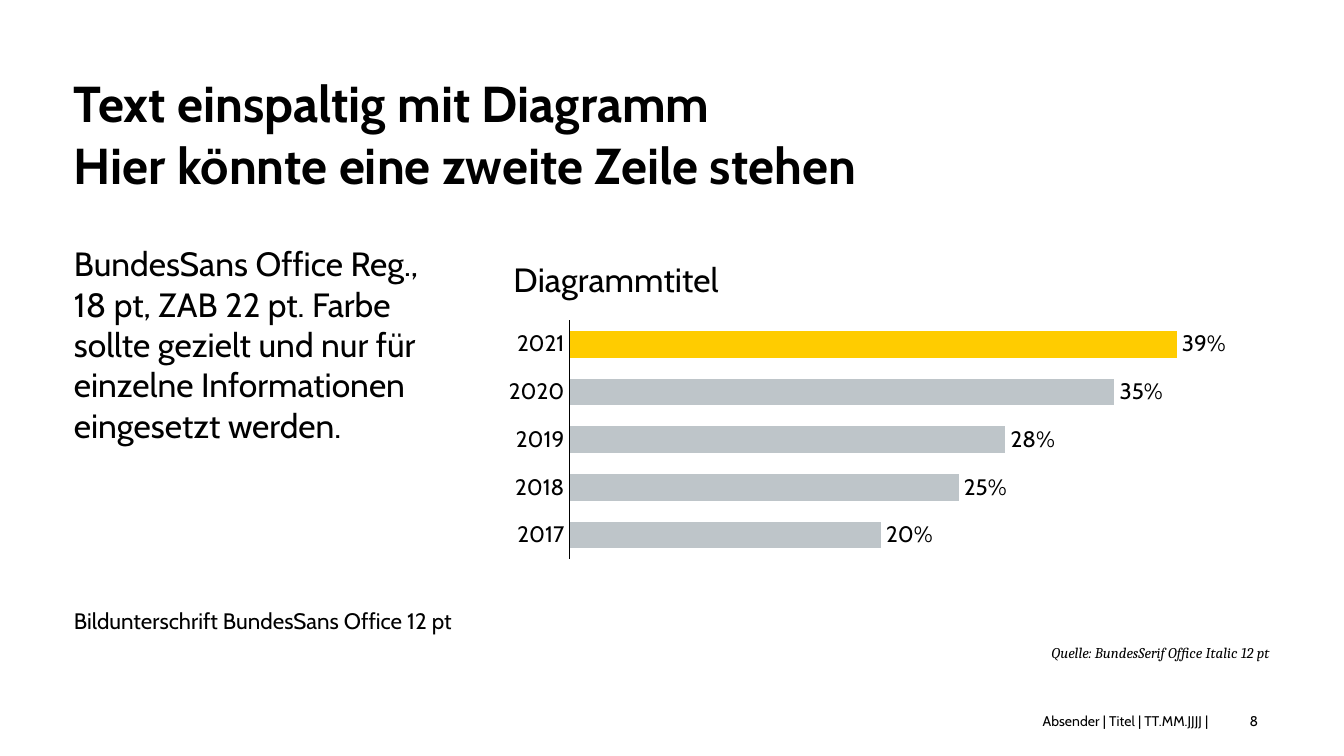
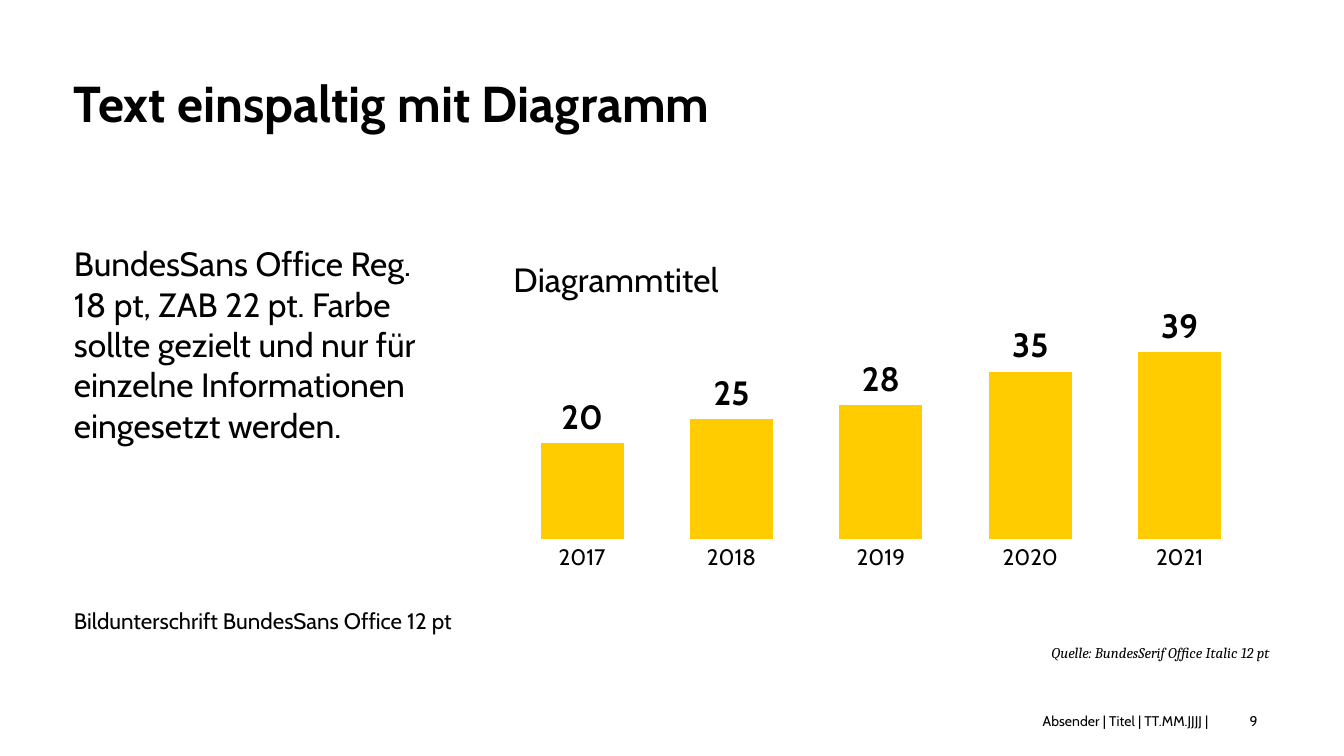
from lxml import etree
from pptx import Presentation
from pptx.chart.data import CategoryChartData
from pptx.dml.color import RGBColor
from pptx.enum import chart as kinds, text
from pptx.oxml import ns
from pptx.util import Inches, Pt

BLACK = RGBColor(0x00, 0x00, 0x00)
YELLOW = RGBColor(0xFF, 0xCC, 0x00)
GRAY = RGBColor(0xBE, 0xC5, 0xC9)
SANS = "Cabin"
SERIF = "Cambria"
MARGIN = 0.55
YEARS = ["2021", "2020", "2019", "2018", "2017"]
PERCENTS = [39, 35, 28, 25, 20]


def add_text(page, area, words, size, font=SANS, bold=False, italic=False, spacing=None,
             align=text.PP_ALIGN.LEFT, anchor=text.MSO_ANCHOR.TOP, inset=0.0):
    box = page.shapes.add_textbox(*map(Inches, area))
    frame = box.text_frame
    frame.word_wrap = True
    frame.vertical_anchor = anchor
    frame.margin_left = frame.margin_right = Inches(inset)
    frame.margin_top = frame.margin_bottom = Inches(inset / 2)
    para = frame.paragraphs[0]
    para.text = words
    para.alignment = align
    if spacing:
        para.line_spacing = Pt(spacing)
    para.font.name = font
    para.font.size = Pt(size)
    para.font.bold = bold
    para.font.italic = italic
    para.font.color.rgb = BLACK


def place(parent, index, **values):
    for old in parent.findall(ns.qn("c:layout")):
        parent.remove(old)
    layout = etree.Element(ns.qn("c:layout"))
    manual = etree.SubElement(layout, ns.qn("c:manualLayout"))
    for tag, value in values.items():
        etree.SubElement(manual, ns.qn("c:" + tag)).set("val", str(value))
    parent.insert(index, layout)


slides = [
    dict(number="8", title="Text einspaltig mit Diagramm\nHier könnte eine zweite Zeile stehen",
         lead="BundesSans Office Reg.,", kind=kinds.XL_CHART_TYPE.BAR_CLUSTERED,
         values=[percent / 100 for percent in PERCENTS], format="0%", top=0.45,
         color=GRAY, label_size=12, bold=False, axis_line=True,
         plot=dict(x=0.1, y=0.23, w=0.9, h=0.71)),
    dict(number="9", title="Text einspaltig mit Diagramm",
         lead="BundesSans Office Reg.", kind=kinds.XL_CHART_TYPE.COLUMN_CLUSTERED,
         values=PERCENTS, format="General", top=45,
         color=YELLOW, label_size=18, bold=True, axis_line=False,
         plot=dict(x=0.02, y=0.24, w=0.96, h=0.64)),
]

deck = Presentation()
deck.slide_width = Inches(10)
deck.slide_height = Inches(10 * 9 / 16)

for content in slides:
    page = deck.slides.add_slide(deck.slide_layouts[6])
    add_text(page, (MARGIN, 0.53, 8.9, 0.87), content["title"], 27, bold=True, spacing=33)

    data = CategoryChartData(number_format=content["format"])
    data.categories = YEARS
    data.add_series("Series 1", content["values"])
    chart = page.shapes.add_chart(content["kind"], Inches(3.66), Inches(1.81),
                                  Inches(5.79), Inches(2.5), data).chart
    chart.has_legend = False
    chart.font.name = SANS
    chart.font.size = Pt(10)
    chart.font.color.rgb = BLACK

    chart.has_title = True
    heading = chart.chart_title.text_frame.paragraphs[0]
    heading.text = "Diagrammtitel"
    heading.font.name = SANS
    heading.font.size = Pt(18)
    heading.font.bold = False
    heading.font.color.rgb = BLACK
    place(chart.chart_title.element, 1, xMode="edge", yMode="edge", x=0.02, y=0.02)
    place(chart.element.find(".//" + ns.qn("c:plotArea")), 0, layoutTarget="inner",
          xMode="edge", yMode="edge", **content["plot"])

    years = chart.category_axis
    years.reverse_order = True
    years.has_major_gridlines = False
    years.major_tick_mark = kinds.XL_TICK_MARK.NONE
    years.tick_labels.font.name = SANS
    years.tick_labels.font.size = Pt(12)
    years.tick_labels.font.color.rgb = BLACK
    if content["axis_line"]:
        years.format.line.color.rgb = BLACK
        years.format.line.width = Pt(0.75)
    else:
        years.format.line.fill.background()

    scale = chart.value_axis
    scale.visible = False
    scale.has_major_gridlines = False
    scale.minimum_scale = 0
    scale.maximum_scale = content["top"]

    bars = chart.plots[0]
    bars.gap_width = 80
    bars.vary_by_categories = False
    series = bars.series[0]
    series.format.fill.solid()
    series.format.fill.fore_color.rgb = content["color"]
    if content["color"] != YELLOW:
        newest = series.points[0].format.fill
        newest.solid()
        newest.fore_color.rgb = YELLOW

    labels = series.data_labels
    labels.show_value = True
    labels.position = kinds.XL_LABEL_POSITION.OUTSIDE_END
    labels.number_format = content["format"]
    labels.number_format_is_linked = False
    labels.font.name = SANS
    labels.font.size = Pt(content["label_size"])
    labels.font.bold = content["bold"]
    labels.font.color.rgb = BLACK

    add_text(page, (MARGIN, 1.81, 2.72, 2.5), content["lead"] + " 18 pt, ZAB 22 pt. Farbe sollte "
             "gezielt und nur für einzelne Informationen eingesetzt werden.", 18)
    add_text(page, (3.03, 5.3, 6.06, 0.13), "Absender | Titel | TT.MM.JJJJ |", 7.5,
             align=text.PP_ALIGN.RIGHT, anchor=text.MSO_ANCHOR.MIDDLE, inset=0.1)
    add_text(page, (9.2, 5.3, 0.47, 0.13), content["number"], 7.5,
             anchor=text.MSO_ANCHOR.MIDDLE, inset=0.1)
    add_text(page, (6.73, 4.72, 2.72, 0.18), "Quelle: BundesSerif Office Italic 12 pt", 8,
             font=SERIF, italic=True, spacing=14.4, align=text.PP_ALIGN.RIGHT)
    add_text(page, (MARGIN, 4.45, 5.79, 0.27), "Bildunterschrift BundesSans Office 12 pt", 12,
             spacing=14.4, anchor=text.MSO_ANCHOR.BOTTOM)

deck.save("out.pptx")
